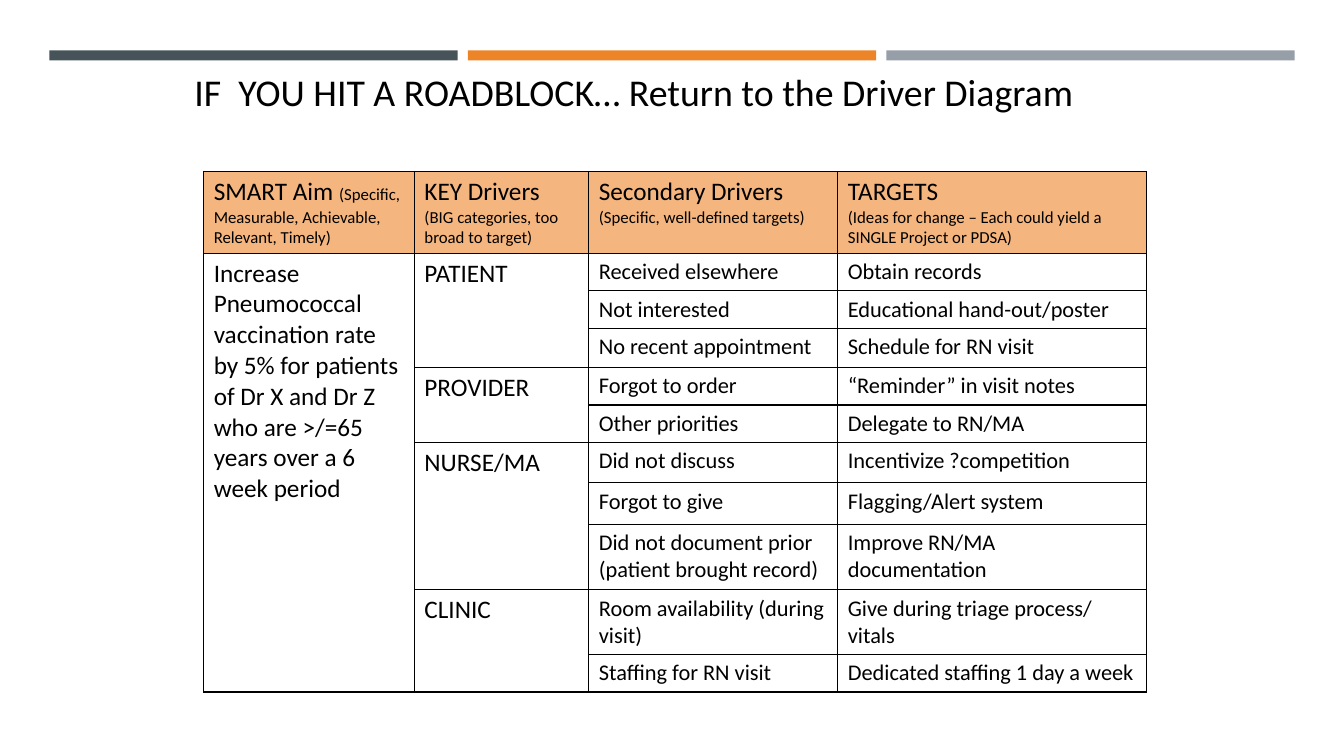
import pptx
import pptx.util
import pptx.dml.color
import pptx.enum.shapes
import pptx.enum.text
import pptx.oxml
import pptx.oxml.ns

Inches = pptx.util.Inches
COLORS = {
    "slate": "465359", "orange": "ED8428", "gray": "969FA7",
    "peach": "F4B57E", "white": "FFFFFF", "black": "000000",
}
FONT = "Calibri"


def rgb(name):
    return pptx.dml.color.RGBColor.from_string(COLORS[name])


def add_text(paragraph, text, size=16, color="black"):
    run = paragraph.add_run()
    run.text = text
    run.font.name = FONT
    run.font.size = pptx.util.Pt(size)
    run.font.color.rgb = rgb(color)


class SlideBuilder:
    def __init__(self, slide, border_color="black", border_width=1):
        self.slide = slide
        self.border_color = border_color
        self.border_width = border_width

    def bar(self, left, top, width, height, color):
        shape = self.slide.shapes.add_shape(
            pptx.enum.shapes.MSO_SHAPE.RECTANGLE,
            Inches(left), Inches(top), Inches(width), Inches(height))
        shape.shadow.inherit = False
        shape.fill.solid()
        shape.fill.fore_color.rgb = rgb(color)
        shape.line.fill.background()
        return shape

    def title(self, left, top, width, height, text, size):
        frame = self.bar(left, top, width, height, "white").text_frame
        frame.word_wrap = True
        frame.vertical_anchor = pptx.enum.text.MSO_ANCHOR.TOP
        frame.paragraphs[0].alignment = pptx.enum.text.PP_ALIGN.LEFT
        add_text(frame.paragraphs[0], text, size=size)

    def table(self, left, top, widths, heights):
        table = self.slide.shapes.add_table(
            len(heights), len(widths), Inches(left), Inches(top),
            Inches(sum(widths)), Inches(sum(heights))).table
        table.first_row = table.horz_banding = False
        for column, width in zip(table.columns, widths):
            column.width = Inches(width)
        for row, height in zip(table.rows, heights):
            row.height = Inches(height)
        for cell in table.iter_cells():
            cell.fill.background()
            self.border(cell)
        return table

    def border(self, cell):
        properties = cell._tc.get_or_add_tcPr()
        width = pptx.util.Pt(self.border_width)
        for index, side in enumerate(("lnL", "lnR", "lnT", "lnB")):
            properties.insert(index, pptx.oxml.parse_xml(
                f'<a:{side} {pptx.oxml.ns.nsdecls("a")} w="{width}"><a:solidFill>'
                f'<a:srgbClr val="{COLORS[self.border_color]}"/>'
                f'</a:solidFill></a:{side}>'))

    def cell(self, cell, *lines, fill=None):
        """Each line is a list of (text, size) pairs."""
        if fill:
            cell.fill.solid()
            cell.fill.fore_color.rgb = rgb(fill)
        frame = cell.text_frame
        for index, line in enumerate(lines):
            paragraph = frame.add_paragraph() if index else frame.paragraphs[0]
            for text, size in line:
                add_text(paragraph, text, size=size)


HEADERS = [
    [[("SMART Aim ", 18),
      ("(Specific, Measurable, Achievable, Relevant, Timely)", 12)]],
    [[("KEY Drivers", 18)], [("(BIG categories, too broad to target)", 12)]],
    [[("Secondary Drivers", 18)], [("(Specific, well-defined targets)", 12)]],
    [[("TARGETS", 18)],
     [("(Ideas for change – Each could yield a SINGLE Project or PDSA)", 12)]],
]
AIM = ("Increase Pneumococcal vaccination rate by 5% for patients of Dr X "
       "and Dr Z who are >/=65 years over a 6 week period")
DRIVERS = {
    "PATIENT": [
        ("Received elsewhere", "Obtain records"),
        ("Not interested", "Educational hand-out/poster"),
        ("No recent appointment", "Schedule for RN visit")],
    "PROVIDER": [
        ("Forgot to order", "“Reminder” in visit notes"),
        ("Other priorities", "Delegate to RN/MA")],
    "NURSE/MA": [
        ("Did not discuss", "Incentivize ?competition"),
        ("Forgot to give", "Flagging/Alert system"),
        ("Did not document prior (patient brought record)",
         "Improve RN/MA documentation")],
    "CLINIC": [
        ("Room availability (during visit)",
         "Give during triage process/ vitals"),
        ("Staffing for RN visit", "Dedicated staffing 1 day a week")],
}
COLUMN_WIDTHS = [2.09, 1.73, 2.47, 3.06]
ROW_HEIGHTS = [0.81, 0.37, 0.37, 0.39, 0.37, 0.37, 0.4, 0.41, 0.65, 0.64, 0.37]


def main():
    presentation = pptx.Presentation()
    presentation.slide_width = Inches(13.33)
    presentation.slide_height = Inches(7.5)
    slide = presentation.slides.add_slide(presentation.slide_layouts[6])
    builder = SlideBuilder(slide)

    # Top bars
    for index, color in enumerate(("slate", "orange", "gray")):
        builder.bar(0.49 + index * 4.15, 0.5, 4.05, 0.1, color)

    # Title
    builder.title(1.83, 0.63, 9.92, 1.01,
                  "IF  YOU HIT A ROADBLOCK… Return to the Driver Diagram", 27)

    # Driver diagram: header and aim
    table = builder.table(2.02, 1.7, COLUMN_WIDTHS, ROW_HEIGHTS)
    for column, lines in enumerate(HEADERS):
        builder.cell(table.cell(0, column), *lines, fill="peach")
    table.cell(1, 0).merge(table.cell(len(ROW_HEIGHTS) - 1, 0))
    builder.cell(table.cell(1, 0), [(AIM, 18)])

    # Driver diagram: key drivers with their secondary drivers and targets
    row = 1
    for driver, pairs in DRIVERS.items():
        table.cell(row, 1).merge(table.cell(row + len(pairs) - 1, 1))
        builder.cell(table.cell(row, 1), [(driver, 18)])
        for secondary, target in pairs:
            builder.cell(table.cell(row, 2), [(secondary, 16)])
            builder.cell(table.cell(row, 3), [(target, 16)])
            row += 1

    presentation.save("out.pptx")


if __name__ == "__main__":
    main()
